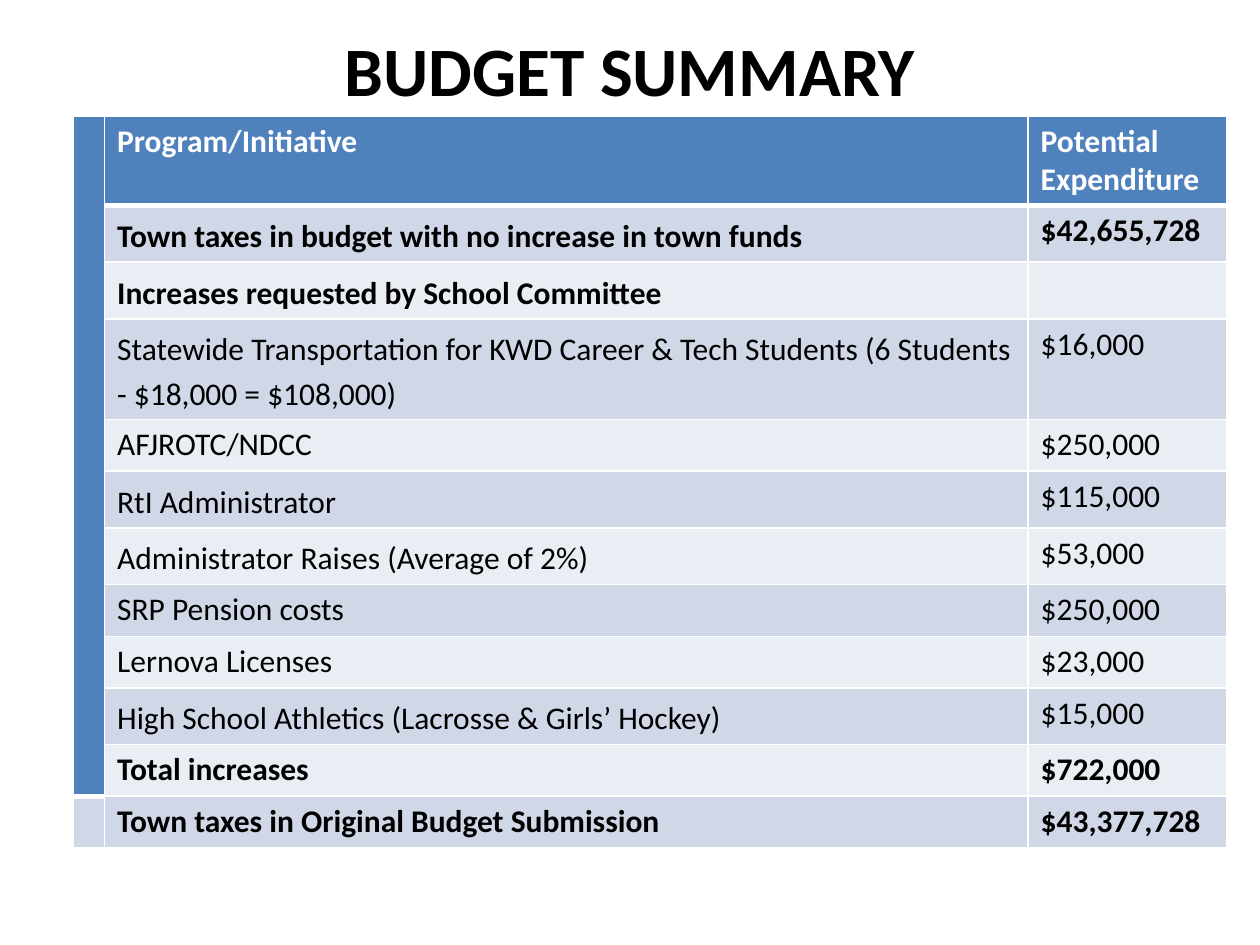
from lxml import etree
from pptx import Presentation
from pptx.dml.color import RGBColor
from pptx.enum.text import MSO_ANCHOR, PP_ALIGN
from pptx.oxml.ns import qn
from pptx.util import Inches, Pt

CENTER = PP_ALIGN.CENTER
MIDDLE = MSO_ANCHOR.MIDDLE
BLACK = RGBColor(0x00, 0x00, 0x00)
WHITE = RGBColor(0xFF, 0xFF, 0xFF)
BLUE = RGBColor(0x4F, 0x81, 0xBD)
BAND_DARK = RGBColor(0xD0, 0xD8, 0xE8)
BAND_LIGHT = RGBColor(0xE9, 0xED, 0xF4)
FONT = "Calibri"

# Program, expenditure, row height, bold, loose line spacing
ROWS = [
    ("Program/Initiative", "Potential Expenditure", 0.71, True, False),
    ("Town taxes in budget with no increase in town funds", "$42,655,728", 0.45, True, True),
    ("Increases requested by School Committee", "", 0.45, True, True),
    ("Statewide Transportation for KWD Career & Tech Students "
     "(6 Students - $18,000 = $108,000)", "$16,000", 0.8, False, True),
    ("AFJROTC/NDCC", "$250,000", 0.41, False, False),
    ("RtI Administrator", "$115,000", 0.45, False, True),
    ("Administrator Raises (Average of 2%)", "$53,000", 0.45, False, True),
    ("SRP Pension costs", "$250,000", 0.41, False, False),
    ("Lernova Licenses", "$23,000", 0.41, False, False),
    ("High School Athletics (Lacrosse & Girls’ Hockey)", "$15,000", 0.45, False, True),
    ("Total increases", "$722,000", 0.41, True, False),
    ("Town taxes in Original Budget Submission", "$43,377,728", 0.41, True, False),
]
COLUMN_WIDTHS = [0.25, 7.33, 1.58]
LAST_ROW = len(ROWS) - 1


def format_run(run, size, color, bold):
    run.font.name = FONT
    run.font.size = Pt(size)
    run.font.color.rgb = color
    run.font.bold = bold


def add_borders(cell, top, bottom):
    properties = cell._tc.get_or_add_tcPr()
    for side, width in (("lnL", 1), ("lnR", 1), ("lnT", top), ("lnB", bottom)):
        line = etree.SubElement(properties, qn(f"a:{side}"), w=str(Pt(width)))
        fill = etree.SubElement(line, qn("a:solidFill"))
        etree.SubElement(fill, qn("a:srgbClr"), val=str(WHITE))


presentation = Presentation()
presentation.slide_width = Inches(10)
presentation.slide_height = Inches(7.5)
slide = presentation.slides.add_slide(presentation.slide_layouts[6])

# Title
title = slide.shapes.add_textbox(Inches(0.5), Inches(0.17), Inches(9), Inches(0.75))
title.text_frame.word_wrap = True
title.text_frame.vertical_anchor = MIDDLE
title.text_frame.text = "BUDGET SUMMARY"
paragraph = title.text_frame.paragraphs[0]
paragraph.alignment = CENTER
format_run(paragraph.runs[0], 39.6, BLACK, True)

# Budget table
table = slide.shapes.add_table(
    len(ROWS), len(COLUMN_WIDTHS), Inches(0.58), Inches(0.92),
    Inches(sum(COLUMN_WIDTHS)), Inches(sum(row[2] for row in ROWS))).table
table.first_row = False
table.horz_banding = False
for column, width in zip(table.columns, COLUMN_WIDTHS):
    column.width = Inches(width)

for row_index, (program, expenditure, height, bold, loose) in enumerate(ROWS):
    table.rows[row_index].height = Inches(height)
    for column_index, text in enumerate(("", program, expenditure)):
        cell = table.cell(row_index, column_index)

        # The side strip reaches down to the last row; a thick rule closes each header
        header_end = LAST_ROW - 1 if column_index == 0 else 0
        add_borders(cell,
                    top=3 if row_index == header_end + 1 else 1,
                    bottom=3 if row_index == header_end else 1)
        cell.fill.solid()
        if row_index <= header_end:
            cell.fill.fore_color.rgb = BLUE
        else:
            cell.fill.fore_color.rgb = BAND_DARK if row_index % 2 else BAND_LIGHT

        cell.text_frame.text = text
        paragraph = cell.text_frame.paragraphs[0]
        for run in paragraph.runs:
            format_run(run, 18, BLACK if row_index else WHITE, bold)
        if loose and column_index == 1:
            paragraph.line_spacing = 1.15
            paragraph.space_after = Pt(10)

table.cell(0, 0).merge(table.cell(LAST_ROW - 1, 0))

presentation.save("out.pptx")
